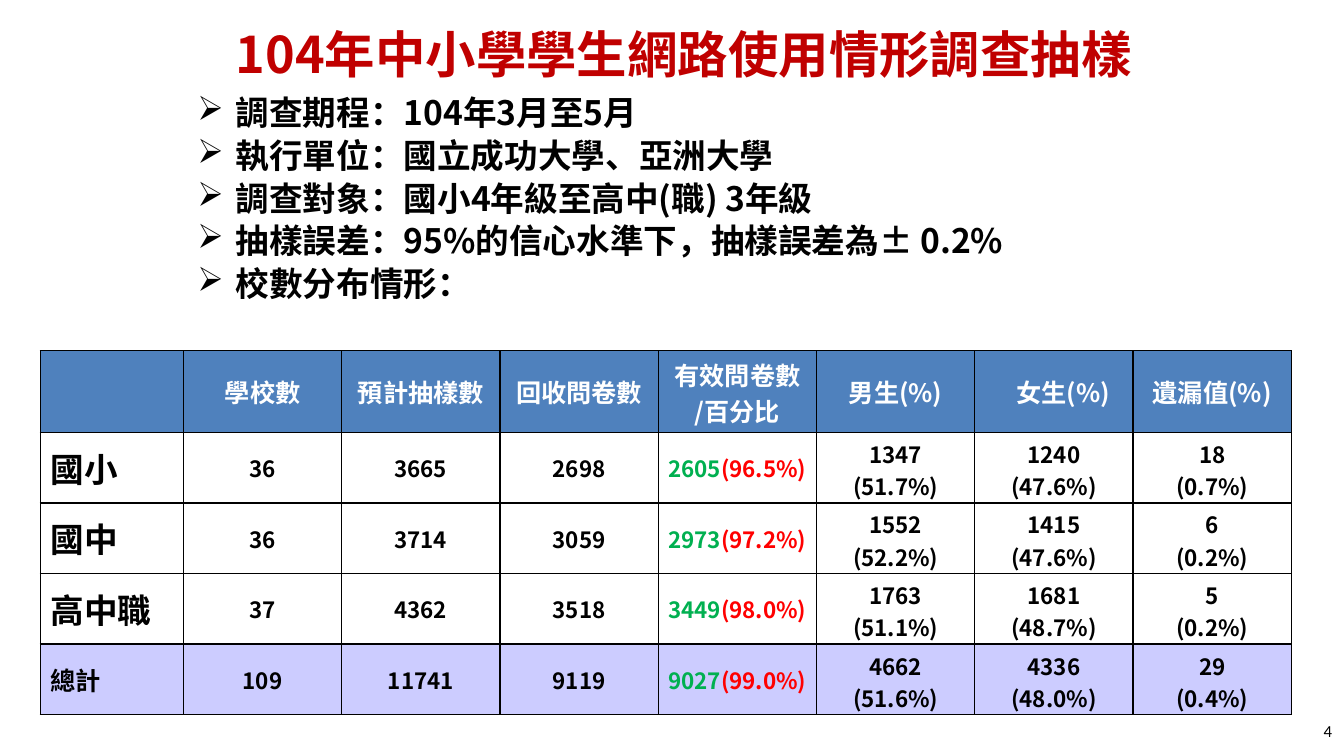
from lxml import etree
from pptx import Presentation
from pptx.dml.color import RGBColor
from pptx.enum.text import MSO_ANCHOR, PP_ALIGN
from pptx.oxml.ns import qn
from pptx.util import Inches, Pt

CENTER, RIGHT, JUSTIFY = PP_ALIGN.CENTER, PP_ALIGN.RIGHT, PP_ALIGN.JUSTIFY
MIDDLE = MSO_ANCHOR.MIDDLE
TITLE_ONLY = 5
CJK_FONT, NUMBER_FONT = "Noto Sans CJK SC", "Calibri"
COLORS = {"title": "C00000", "text": "000000", "header": "4F81BD",
          "header_text": "FFFFFF", "total": "CCCCFF",
          "valid": "00B050", "percent": "FF0000"}

TOPICS = [
    "調查期程：104年3月至5月",
    "執行單位：國立成功大學、亞洲大學",
    "調查對象：國小4年級至高中(職) 3年級",
    "抽樣誤差：95%的信心水準下，抽樣誤差為± 0.2%",
    "校數分布情形：",
]
HEADERS = ["", "學校數", "預計抽樣數", "回收問卷數", "有效問卷數\n/百分比",
           "男生(%)", "女生(%)", "遺漏值(%)"]
# A tuple holds a count and its percentage
SAMPLES = [
    ["國小", "36", "3665", "2698", ("2605", "(96.5%)"),
     "1347\v(51.7%)", "1240\v(47.6%)", "18\n(0.7%)"],
    ["國中", "36", "3714", "3059", ("2973", "(97.2%)"),
     "1552\v(52.2%)", "1415\v(47.6%)", "6\n(0.2%)"],
    ["高中職", "37", "4362", "3518", ("3449", "(98.0%)"),
     "1763\v(51.1%)", "1681\v(48.7%)", "5\n(0.2%)"],
    ["總計", "109", "11741", "9119", ("9027", "(99.0%)"),
     "4662\v(51.6%)", "4336\v(48.0%)", "29\n(0.4%)"],
]
FEMALE_COLUMN = 6
LABEL_WIDTH, COLUMN_WIDTH = 1.42, 1.57
HEADER_HEIGHT, ROW_HEIGHT = 0.81, 0.7


def rgb(name):
    return RGBColor.from_string(COLORS[name])


def format_span(span, size, color="text", bold=True, name=CJK_FONT):
    font = span.font
    font.size, font.bold, font.name = Pt(size), bold, name
    font.color.rgb = rgb(color)
    east_asian = etree.Element(qn("a:ea"), typeface=name)
    span._r.rPr.find(qn("a:latin")).addnext(east_asian)


def format_frame(frame, size, color="text", align=None, **font):
    for para in frame.paragraphs:
        if align is not None:
            para.alignment = align
        for span in para.runs:
            format_span(span, size, color, **font)


def add_title(page, text):
    title = page.shapes.title
    title.left, title.top = Inches(2.17), Inches(-0.1)
    title.width, title.height = Inches(9.22), Inches(1.25)
    title.text_frame.text = text
    title.text_frame.vertical_anchor = MIDDLE
    format_frame(title.text_frame, 36, "title", CENTER)


def add_text(page, text, left, top, width, height):
    box = page.shapes.add_textbox(*map(Inches, (left, top, width, height)))
    box.text_frame.word_wrap = True
    box.text_frame.text = text
    return box.text_frame


def add_bullets(page, lines):
    frame = add_text(page, "\n".join(lines), 1.86, 0.91, 9.61, 4.95)
    for index, para in enumerate(frame.paragraphs):
        props = para._p.get_or_add_pPr()
        props.set("marL", str(Inches(0.38)))
        props.set("indent", str(-Inches(0.38)))
        etree.SubElement(props, qn("a:buChar"), char="➢")
        para.line_spacing = 0.9
        para.space_before = Pt(4.6 if index else 0)
    format_frame(frame, 24)


def draw_borders(cell):
    props = cell._tc.get_or_add_tcPr()
    for position, side in enumerate(("lnL", "lnR", "lnT", "lnB")):
        line = etree.Element(qn(f"a:{side}"), w=str(Pt(1)))
        fill = etree.SubElement(line, qn("a:solidFill"))
        etree.SubElement(fill, qn("a:srgbClr"), val=COLORS["text"])
        props.insert(position, line)


def fill_cell(cell, content, size, color="text", align=CENTER, fill=None):
    cell.vertical_anchor = MIDDLE
    if fill:
        cell.fill.solid()
        cell.fill.fore_color.rgb = rgb(fill)
    else:
        cell.fill.background()
    draw_borders(cell)
    if isinstance(content, tuple):
        para = cell.text_frame.paragraphs[0]
        para.alignment = align
        for text, shade in zip(content, ("valid", "percent")):
            span = para.add_run()
            span.text = text
            format_span(span, size, shade)
    else:
        cell.text_frame.text = content
        format_frame(cell.text_frame, size, color, align)


def add_sample_table(page):
    rows, columns = len(SAMPLES) + 1, len(HEADERS)
    width = LABEL_WIDTH + COLUMN_WIDTH * (columns - 1)
    height = HEADER_HEIGHT + ROW_HEIGHT * len(SAMPLES)
    table = page.shapes.add_table(rows, columns, Inches(0.4), Inches(3.48),
                                  Inches(width), Inches(height)).table
    table.first_row = table.horz_banding = False
    for index, column in enumerate(table.columns):
        column.width = Inches(COLUMN_WIDTH if index else LABEL_WIDTH)
    for index, row in enumerate(table.rows):
        row.height = Inches(ROW_HEIGHT if index else HEADER_HEIGHT)

    for column, heading in enumerate(HEADERS):
        fill_cell(table.cell(0, column), heading, 18, "header_text",
                  fill="header")
    table.cell(0, FEMALE_COLUMN).margin_left = Inches(0.28)

    for row, sample in enumerate(SAMPLES, start=1):
        is_total = row == len(SAMPLES)
        fill = "total" if is_total else None
        label, *values = sample
        fill_cell(table.cell(row, 0), label, 18 if is_total else 24,
                  align=JUSTIFY, fill=fill)
        for column, value in enumerate(values, start=1):
            fill_cell(table.cell(row, column), value, 16, fill=fill)


def add_page_number(page, number):
    frame = add_text(page, number, 10.2, 7.1, 3.11, 0.4)
    format_frame(frame, 12, align=RIGHT, bold=False, name=NUMBER_FONT)


def main():
    deck = Presentation()
    deck.slide_width, deck.slide_height = Inches(13.33), Inches(7.5)
    page = deck.slides.add_slide(deck.slide_layouts[TITLE_ONLY])
    add_title(page, "104年中小學學生網路使用情形調查抽樣")
    add_bullets(page, TOPICS)
    add_sample_table(page)
    add_page_number(page, "4")
    deck.save("out.pptx")


if __name__ == "__main__":
    main()
